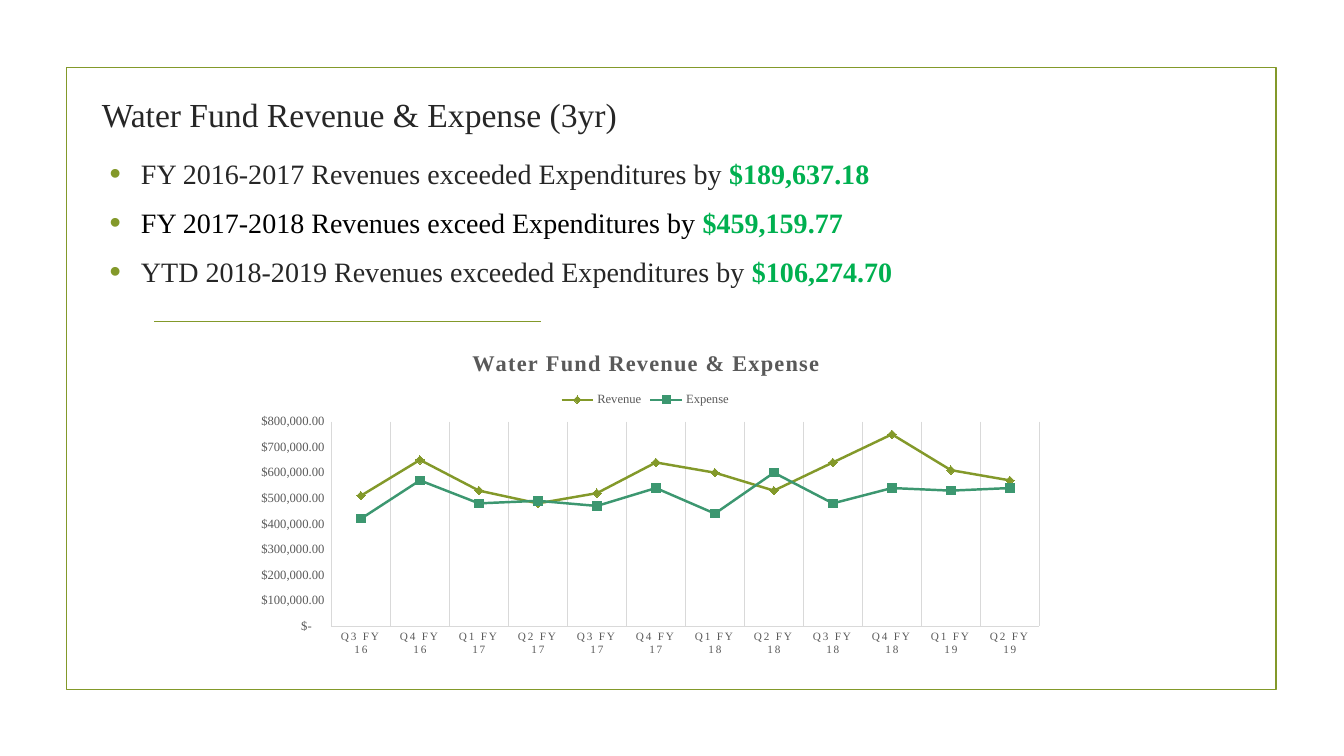
from dataclasses import dataclass

from lxml.etree import SubElement
from pptx import Presentation
from pptx.chart.data import CategoryChartData
from pptx.dml.color import RGBColor
from pptx.enum.chart import XL_CHART_TYPE, XL_LEGEND_POSITION, XL_MARKER_STYLE, XL_TICK_MARK
from pptx.enum.shapes import MSO_CONNECTOR, MSO_SHAPE
from pptx.enum.text import MSO_ANCHOR, MSO_AUTO_SIZE, PP_ALIGN
from pptx.oxml import parse_xml
from pptx.oxml.ns import nsdecls, qn
from pptx.util import Inches, Pt


@dataclass(frozen=True)
class Theme:
    """Colours, font and type sizes of the slide."""
    olive: str = "83992A"
    teal: str = "3C9770"
    gain: str = "00B050"
    ink: str = "262626"
    black: str = "000000"
    muted: str = "595959"
    rule: str = "D9D9D9"
    font: str = "Times New Roman"
    title: int = 24
    body: int = 20
    chart_title: int = 16
    label: int = 9
    category: int = 8
    outline: float = 1.25
    series: float = 1.75
    hairline: float = 0.75


THEME = Theme()
TITLE = "Water Fund Revenue & Expense (3yr)"
RESULTS = [
    ("FY 2016-2017 Revenues exceeded Expenditures by ", "$189,637.18", THEME.ink),
    ("FY 2017-2018 Revenues exceed Expenditures by ", "$459,159.77", THEME.black),
    ("YTD 2018-2019 Revenues exceeded Expenditures by ", "$106,274.70", THEME.ink),
]
QUARTERS = [f"Q{(2 + i) % 4 + 1} FY {16 + (2 + i) // 4}" for i in range(12)]
SERIES = [
    ("Revenue", THEME.olive, XL_MARKER_STYLE.DIAMOND,
     [510, 650, 530, 480, 520, 640, 600, 530, 640, 750, 610, 570]),
    ("Expense", THEME.teal, XL_MARKER_STYLE.SQUARE,
     [420, 570, 480, 490, 470, 540, 440, 600, 480, 540, 530, 540]),
]
DOLLARS = r'_("$"* #,##0.00_);_("$"* \(#,##0.00\);_("$"* "-"??_);_(@_)'


def assign(target, values):
    """Set every attribute named in a dict on the target."""
    for name, value in values.items():
        setattr(target, name, value)


def style_font(font, size, color, bold=False):
    """Give a font the theme typeface with a size, colour and weight."""
    assign(font, {"name": THEME.font, "size": Pt(size), "bold": bold})
    font.color.rgb = RGBColor.from_string(color)


def style_line(line, color, width):
    """Give a line a solid colour and a width."""
    line.color.rgb = RGBColor.from_string(color)
    line.width = Pt(width)


def add_frame(slide, left, top, width, height):
    """Draw the outlined frame and the short divider inside it."""
    frame = slide.shapes.add_shape(
        MSO_SHAPE.RECTANGLE, Inches(left), Inches(top), Inches(width), Inches(height))
    frame.shadow.inherit = False
    frame.fill.background()
    style_line(frame.line, THEME.olive, THEME.outline)
    start, level = left + 0.87, top + 2.52
    divider = slide.shapes.add_connector(
        MSO_CONNECTOR.STRAIGHT, Inches(start), Inches(level), Inches(start + 3.84), Inches(level))
    style_line(divider.line, THEME.olive, THEME.outline)
    SubElement(divider._element.spPr, qn("a:effectLst"))


def add_title(slide, left, top, width, height):
    """Place and format the title placeholder."""
    title = slide.shapes.title
    assign(title, {"left": Inches(left), "top": Inches(top),
                   "width": Inches(width), "height": Inches(height)})
    assign(title.text_frame, {"text": TITLE, "vertical_anchor": MSO_ANCHOR.BOTTOM,
                              "word_wrap": True, "auto_size": MSO_AUTO_SIZE.NONE})
    paragraph = title.text_frame.paragraphs[0]
    paragraph.alignment = PP_ALIGN.CENTER
    style_font(paragraph.runs[0].font, THEME.title, THEME.ink)


def add_bullet(paragraph):
    """Give a paragraph a hanging olive bullet."""
    properties = paragraph._p.get_or_add_pPr()
    properties.set("marL", str(Inches(0.31)))
    properties.set("indent", str(-Inches(0.31)))
    color = SubElement(properties, qn("a:buClr"))
    SubElement(color, qn("a:srgbClr")).set("val", THEME.olive)
    SubElement(properties, qn("a:buSzPct")).set("val", "115000")
    SubElement(properties, qn("a:buFont")).set("typeface", "Arial")
    SubElement(properties, qn("a:buChar")).set("char", "•")


def add_results(slide, left, top, width, height):
    """List the yearly results with their amounts highlighted."""
    box = slide.shapes.add_textbox(Inches(left), Inches(top), Inches(width), Inches(height))
    text_frame = box.text_frame
    text_frame.word_wrap = True
    for index, (statement, amount, color) in enumerate(RESULTS):
        paragraph = text_frame.add_paragraph() if index else text_frame.paragraphs[0]
        add_bullet(paragraph)
        paragraph.space_after = Pt(6)
        if index:
            paragraph.space_before = Pt(5)
        for text, run_color, bold in ((statement, color, False), (amount, THEME.gain, True)):
            run = paragraph.add_run()
            run.text = text
            style_font(run.font, THEME.body, run_color, bold)


def manual_layout(x, y, width=None, height=None, inner=False):
    """Build a chart layout element from fractions of the chart area."""
    fields = [("layoutTarget", "inner")] if inner else []
    fields += [("xMode", "edge"), ("yMode", "edge"), ("x", x), ("y", y)]
    if width:
        fields += [("w", width), ("h", height)]
    body = "".join(f'<c:{name} val="{value}"/>' for name, value in fields)
    return parse_xml(
        f'<c:layout {nsdecls("c")}><c:manualLayout>{body}</c:manualLayout></c:layout>')


def place(element, layout, after=None):
    """Replace an element's layout, putting it after a given child or first."""
    for old in element.findall(qn("c:layout")):
        element.remove(old)
    if after is None:
        element.insert(0, layout)
    else:
        element.find(qn(after)).addnext(layout)


def format_axes(chart):
    """Style the quarter and dollar axes."""
    for axis, size in ((chart.category_axis, THEME.category), (chart.value_axis, THEME.label)):
        assign(axis, {"major_tick_mark": XL_TICK_MARK.NONE, "minor_tick_mark": XL_TICK_MARK.NONE})
        style_font(axis.tick_labels.font, size, THEME.muted)
        style_line(axis.format.line, THEME.rule, THEME.hairline)
    quarters, dollars = chart.category_axis, chart.value_axis
    quarters.has_major_gridlines = True
    style_line(quarters.major_gridlines.format.line, THEME.rule, THEME.hairline)
    quarters.tick_labels.font._element.set("spc", "120")
    assign(dollars, {"has_major_gridlines": False, "minimum_scale": 0,
                     "maximum_scale": 800000, "major_unit": 100000})
    assign(dollars.tick_labels, {"number_format": DOLLARS, "number_format_is_linked": False})


def add_fund_chart(slide, left, top, width, height):
    """Plot quarterly revenue and expense."""
    data = CategoryChartData(number_format=DOLLARS)
    data.categories = QUARTERS
    for name, _, _, thousands in SERIES:
        data.add_series(name, [value * 1000 for value in thousands])
    chart = slide.shapes.add_chart(
        XL_CHART_TYPE.LINE_MARKERS, Inches(left), Inches(top),
        Inches(width), Inches(height), data).chart
    style_font(chart.font, 10, THEME.black)
    assign(chart, {"has_title": True, "has_legend": True})
    chart.chart_title.text_frame.text = "Water Fund Revenue & Expense"
    run = chart.chart_title.text_frame.paragraphs[0].runs[0]
    style_font(run.font, THEME.chart_title, THEME.muted, True)
    run.font._element.set("spc", "100")
    assign(chart.legend, {"position": XL_LEGEND_POSITION.TOP, "include_in_layout": False})
    style_font(chart.legend.font, THEME.label, THEME.muted)
    format_axes(chart)
    plot = chart.plots[0]
    plot.vary_by_categories = False
    for series, (_, color, marker, _) in zip(plot.series, SERIES):
        series.smooth = False
        style_line(series.format.line, color, THEME.series)
        assign(series.marker, {"style": marker, "size": 6})
        series.marker.format.fill.solid()
        series.marker.format.fill.fore_color.rgb = RGBColor.from_string(color)
        style_line(series.marker.format.line, color, THEME.hairline)
    place(chart.chart_title._element, manual_layout(0.28, 0.05), "c:tx")
    place(chart.legend._element, manual_layout(0.39, 0.18, 0.22, 0.07), "c:legendPos")
    place(chart._chartSpace.chart.plotArea, manual_layout(0.11, 0.28, 0.88, 0.61, True))


def main():
    """Build and save the slide."""
    presentation = Presentation()
    assign(presentation, {"slide_width": Inches(13.33), "slide_height": Inches(7.5)})
    slide = presentation.slides.add_slide(presentation.slide_layouts[5])
    add_frame(slide, 0.66, 0.67, 12, 6.17)
    add_title(slide, 0.51, 0.79, 6.11, 0.59)
    add_results(slide, 0.99, 1.5, 8.46, 1.6)
    add_fund_chart(slide, 2.41, 3.25, 7.98, 3.33)
    presentation.save("out.pptx")


if __name__ == "__main__":
    main()
